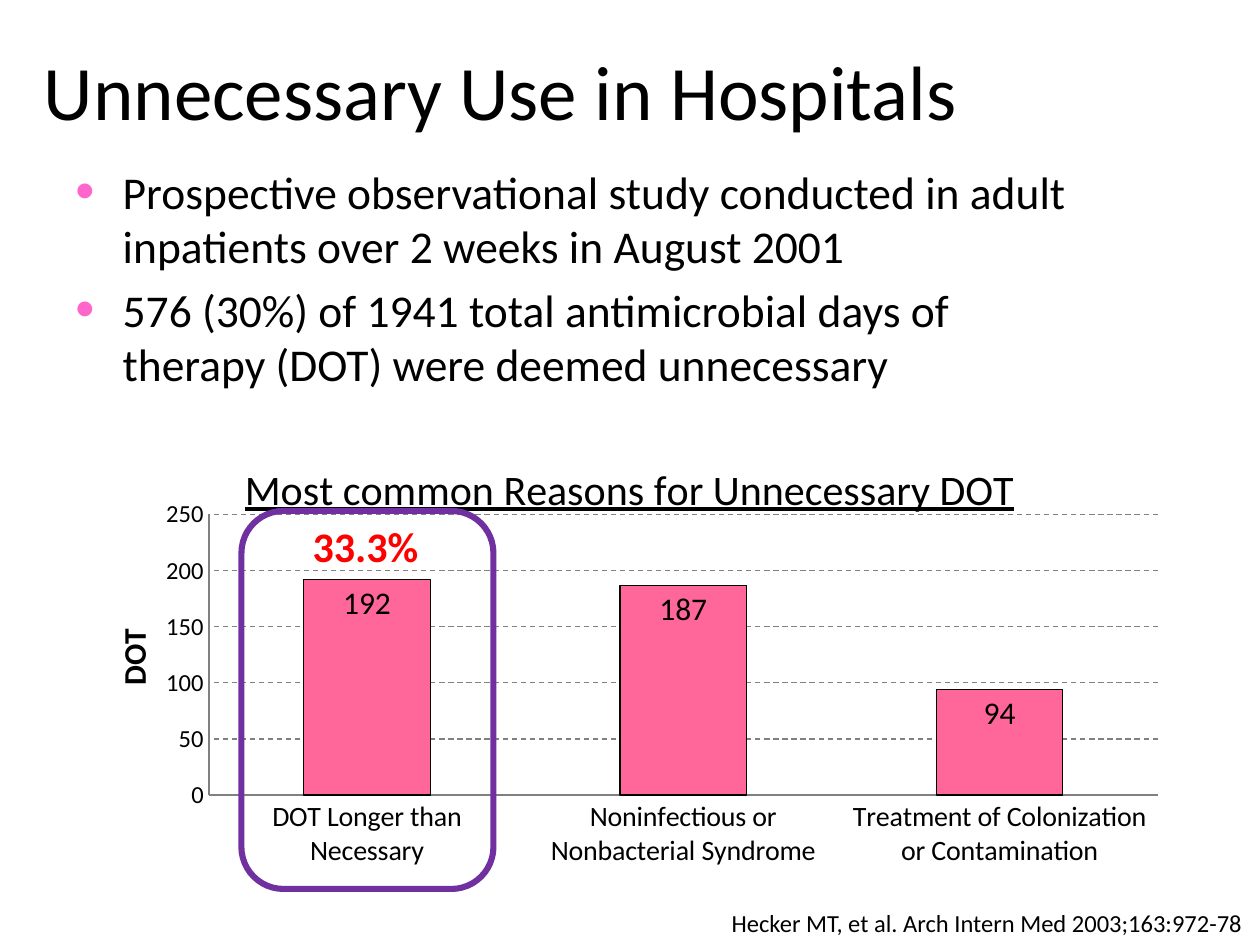
from lxml.etree import SubElement
from pptx import Presentation
from pptx.chart.data import CategoryChartData
from pptx.dml.color import RGBColor
from pptx.enum.chart import XL_CHART_TYPE, XL_LABEL_POSITION, XL_TICK_MARK
from pptx.enum.dml import MSO_LINE
from pptx.enum.shapes import MSO_SHAPE
from pptx.enum.text import MSO_ANCHOR
from pptx.oxml import parse_xml
from pptx.oxml.ns import nsdecls, qn
from pptx.util import Pt

FONT = "Calibri"
COLORS = {"text": "000000", "bullet": "FF66CC", "bar": "FF6699",
          "frame": "7030A0", "highlight": "FF0000", "grid": "808080"}
BULLETS = [
    "Prospective observational study conducted in adult inpatients over 2 weeks in August 2001",
    "576 (30%) of 1941 total antimicrobial days of therapy (DOT) were deemed unnecessary",
]
REASONS = {
    "DOT Longer than Necessary": 192,
    "Noninfectious or Nonbacterial Syndrome": 187,
    "Treatment of Colonization or Contamination": 94,
}


def color(name):
    return RGBColor.from_string(COLORS[name])


def set_font(font, size, ink="text", bold=False, underline=False):
    font.name, font.size = FONT, Pt(size)
    font.bold, font.underline = bold, underline
    font.color.rgb = color(ink)


def add_bullet(para, indent):
    properties = para._p.get_or_add_pPr()
    properties.set("marL", str(Pt(indent)))
    properties.set("indent", str(-Pt(indent)))
    bullet_color = SubElement(properties, qn("a:buClr"))
    SubElement(bullet_color, qn("a:srgbClr"), val=COLORS["bullet"])
    SubElement(properties, qn("a:buSzPct"), val="120000")
    SubElement(properties, qn("a:buFont"), typeface="Arial")
    SubElement(properties, qn("a:buChar"), char="•")


def add_text(page, lines, left, top, width, height, wrap=True,
             anchor=MSO_ANCHOR.TOP, indent=0, bulleted=False, gap=0, **font):
    box = page.shapes.add_textbox(Pt(left), Pt(top), Pt(width), Pt(height))
    frame = box.text_frame
    frame.word_wrap, frame.vertical_anchor = wrap, anchor
    for index, line in enumerate(lines):
        para = frame.add_paragraph() if index else frame.paragraphs[0]
        if bulleted:
            add_bullet(para, indent)
        elif indent:
            para._p.get_or_add_pPr().set("marL", str(Pt(indent)))
        if index:
            para.space_before = Pt(gap)
        span = para.add_run()
        span.text = line
        set_font(span.font, **font)


def manual_layout(x, y, width=None, height=None):
    """Return a chart layout given as fractions of the chart area."""
    values = [("xMode", "edge"), ("yMode", "edge"), ("x", x), ("y", y)]
    if width:
        values.insert(0, ("layoutTarget", "inner"))
        values += [("w", width), ("h", height)]
    parts = "".join(f'<c:{tag} val="{value}"/>' for tag, value in values)
    return parse_xml(f'<c:layout {nsdecls("c")}><c:manualLayout>{parts}'
                     '</c:manualLayout></c:layout>')


def set_chart_title(title, text, x, y, **font):
    title.text_frame.text = text
    set_font(title.text_frame.paragraphs[0].runs[0].font, **font)
    element = title._element
    for layout in element.findall(qn("c:layout")):
        element.remove(layout)
    element.find(qn("c:tx")).addnext(manual_layout(x, y))


def style_axis(axis, size):
    axis.major_tick_mark = axis.minor_tick_mark = XL_TICK_MARK.NONE
    axis.format.line.color.rgb = color("grid")
    set_font(axis.tick_labels.font, size)


def add_reasons_chart(page):
    data = CategoryChartData()
    data.categories = list(REASONS)
    data.add_series("Series 1", list(REASONS.values()))
    chart = page.shapes.add_chart(XL_CHART_TYPE.COLUMN_CLUSTERED, Pt(42), Pt(240),
                                  Pt(624), Pt(270), data).chart
    set_font(chart.font, 18)
    chart.has_legend = False
    set_chart_title(chart.chart_title, "Most common Reasons for Unnecessary DOT",
                    0.15, 0.07, size=24, underline=True)

    style_axis(chart.category_axis, 16)
    values = chart.value_axis
    style_axis(values, 14)
    values.minimum_scale, values.maximum_scale, values.major_unit = 0, 250, 50
    grid = values.major_gridlines.format.line
    grid.color.rgb, grid.dash_style = color("grid"), MSO_LINE.DASH
    set_chart_title(values.axis_title, "DOT", 0.03, 0.43, size=18, bold=True)

    plot = chart.plots[0]
    plot.gap_width, plot.vary_by_categories = 150, False
    plot.has_data_labels = True
    labels = plot.data_labels
    labels.show_value, labels.position = True, XL_LABEL_POSITION.INSIDE_END
    set_font(labels.font, 18)
    bars = plot.series[0].format
    bars.fill.solid()
    bars.fill.fore_color.rgb = color("bar")
    bars.line.color.rgb, bars.line.width = color("text"), Pt(0.75)

    area = chart._chartSpace.chart.plotArea
    for layout in area.findall(qn("c:layout")):
        area.remove(layout)
    area.insert(0, manual_layout(0.124, 0.2, 0.869, 0.594))


def add_frame(page, left, top, width, height):
    frame = page.shapes.add_shape(MSO_SHAPE.ROUNDED_RECTANGLE,
                                  Pt(left), Pt(top), Pt(width), Pt(height))
    frame.shadow.inherit = False
    frame.fill.background()
    frame.line.color.rgb, frame.line.width = color("frame"), Pt(3.5)


def main():
    deck = Presentation()
    deck.slide_width, deck.slide_height = Pt(720), Pt(540)
    page = deck.slides.add_slide(deck.slide_layouts[6])
    add_text(page, ["Unnecessary Use in Hospitals"], 0, 6, 648, 90,
             anchor=MSO_ANCHOR.MIDDLE, indent=18, size=44)
    add_text(page, BULLETS, 36, 90, 600, 150, bulleted=True, indent=27, gap=5.2, size=26)
    add_reasons_chart(page)
    add_text(page, ["Hecker MT, et al. Arch Intern Med 2003;163:972-78"],
             411, 515.5, 309, 24.5, wrap=False, size=14)
    add_frame(page, 138, 292, 144, 216)
    add_text(page, ["33.3%"], 171.5, 294, 75.5, 36, wrap=False,
             size=24, ink="highlight", bold=True)
    deck.save("out.pptx")


if __name__ == "__main__":
    main()
